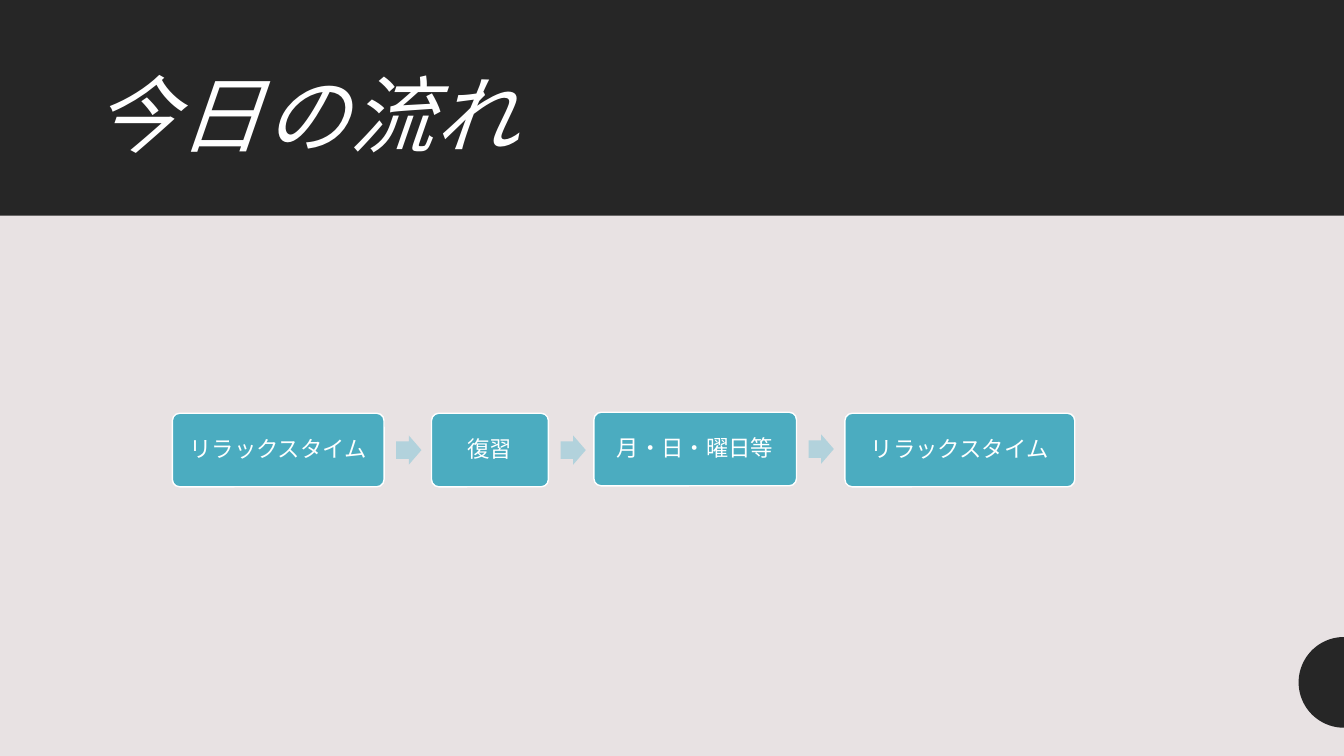
from dataclasses import dataclass
from math import cos, pi, sin

from pptx import Presentation
from pptx.dml.color import RGBColor
from pptx.enum.shapes import MSO_SHAPE as Shape
from pptx.enum.text import MSO_ANCHOR as Anchor, PP_ALIGN as Align
from pptx.util import Inches, Pt

# Content
TITLE = "今日の流れ"
STEPS = [  # label, left, top, width
    ("リラックスタイム", 1.71, 4.1, 2.1),
    ("復習", 4.28, 4.1, 1.16),
    ("月・日・曜日等", 5.89, 4.09, 2.01),
    ("リラックスタイム", 8.38, 4.1, 2.28),
]


@dataclass(frozen=True)
class Theme:
    dark: str = "262626"
    paper: str = "E8E2E3"
    step: str = "4BACC0"
    arrow: str = "B2D2DC"
    white: str = "FFFFFF"
    title_font: str = "Arial"
    step_font: str = "Calibri"
    title_size: int = 60
    step_size: int = 16


THEME = Theme()
SLIDE_WIDTH, SLIDE_HEIGHT = 13.33, 7.5
HEADER_HEIGHT = 2.14
STEP_HEIGHT = 0.73
STEP_INSET = 0.07
ARROW_WIDTH, ARROW_HEIGHT = 0.25, 0.29
ARROW_GAP = 0.12
CIRCLE_MIDDLE, CIRCLE_RADIUS, CIRCLE_POINTS = 6.77, 0.45, 48


def paint(shape, color, line=None):
    shape.shadow.inherit = False
    shape.fill.solid()
    shape.fill.fore_color.rgb = RGBColor.from_string(color)
    if line:
        shape.line.color.rgb = RGBColor.from_string(line)
        shape.line.width = Pt(1)
    else:
        shape.line.fill.background()


def add_block(page, kind, left, top, width, height, color, line=None):
    block = page.shapes.add_shape(
        kind, Inches(left), Inches(top), Inches(width), Inches(height))
    paint(block, color, line)
    return block


def write(box, text, font, size):
    frame = box.text_frame
    frame.text = text
    frame.word_wrap = True
    frame.vertical_anchor = Anchor.MIDDLE
    para = frame.paragraphs[0]
    para.line_spacing = 0.9
    span = para.runs[0]
    span.font.name = font
    span.font.size = Pt(size)
    span.font.color.rgb = RGBColor.from_string(THEME.white)
    return para


def add_title(page):
    box = page.shapes.add_textbox(
        Inches(0.83), Inches(0.46), Inches(11.67), Inches(1.45))
    para = write(box, TITLE, THEME.title_font, THEME.title_size)
    span = para.runs[0]
    span.font.italic = True
    span.font._element.set("spc", "100")


def add_half_circle(page):
    angles = [pi / 2 + pi * i / CIRCLE_POINTS for i in range(CIRCLE_POINTS + 1)]
    points = [(Inches(SLIDE_WIDTH + CIRCLE_RADIUS * cos(angle)),
               Inches(CIRCLE_MIDDLE + CIRCLE_RADIUS * sin(angle)))
              for angle in angles]
    builder = page.shapes.build_freeform(*points[0])
    builder.add_line_segments(points[1:], close=True)
    paint(builder.convert_to_shape(), THEME.dark)


def add_step(page, label, left, top, width):
    box = add_block(page, Shape.ROUNDED_RECTANGLE, left, top, width,
                    STEP_HEIGHT, THEME.step, THEME.white)
    box.adjustments[0] = 0.1
    frame = box.text_frame
    frame.margin_left = frame.margin_right = Inches(STEP_INSET)
    frame.margin_top = frame.margin_bottom = Inches(STEP_INSET)
    para = write(box, label, THEME.step_font, THEME.step_size)
    para.alignment = Align.CENTER


def add_arrow(page, left, top):
    arrow = add_block(page, Shape.RIGHT_ARROW, left, top,
                      ARROW_WIDTH, ARROW_HEIGHT, THEME.arrow)
    arrow.adjustments[0] = 0.6
    arrow.adjustments[1] = 0.5


def main():
    deck = Presentation()
    deck.slide_width = Inches(SLIDE_WIDTH)
    deck.slide_height = Inches(SLIDE_HEIGHT)
    page = deck.slides.add_slide(deck.slide_layouts[6])
    page.background.fill.solid()
    page.background.fill.fore_color.rgb = RGBColor.from_string(THEME.paper)

    # Header band, title and edge ornament
    add_block(page, Shape.RECTANGLE, 0, 0, SLIDE_WIDTH, HEADER_HEIGHT, THEME.dark)
    add_title(page)
    add_half_circle(page)

    # Steps, with an arrow after each one but the last
    for number, (label, left, top, width) in enumerate(STEPS, start=1):
        add_step(page, label, left, top, width)
        if number < len(STEPS):
            add_arrow(page, left + width + ARROW_GAP,
                      top + (STEP_HEIGHT - ARROW_HEIGHT) / 2)

    deck.save("out.pptx")


if __name__ == "__main__":
    main()
